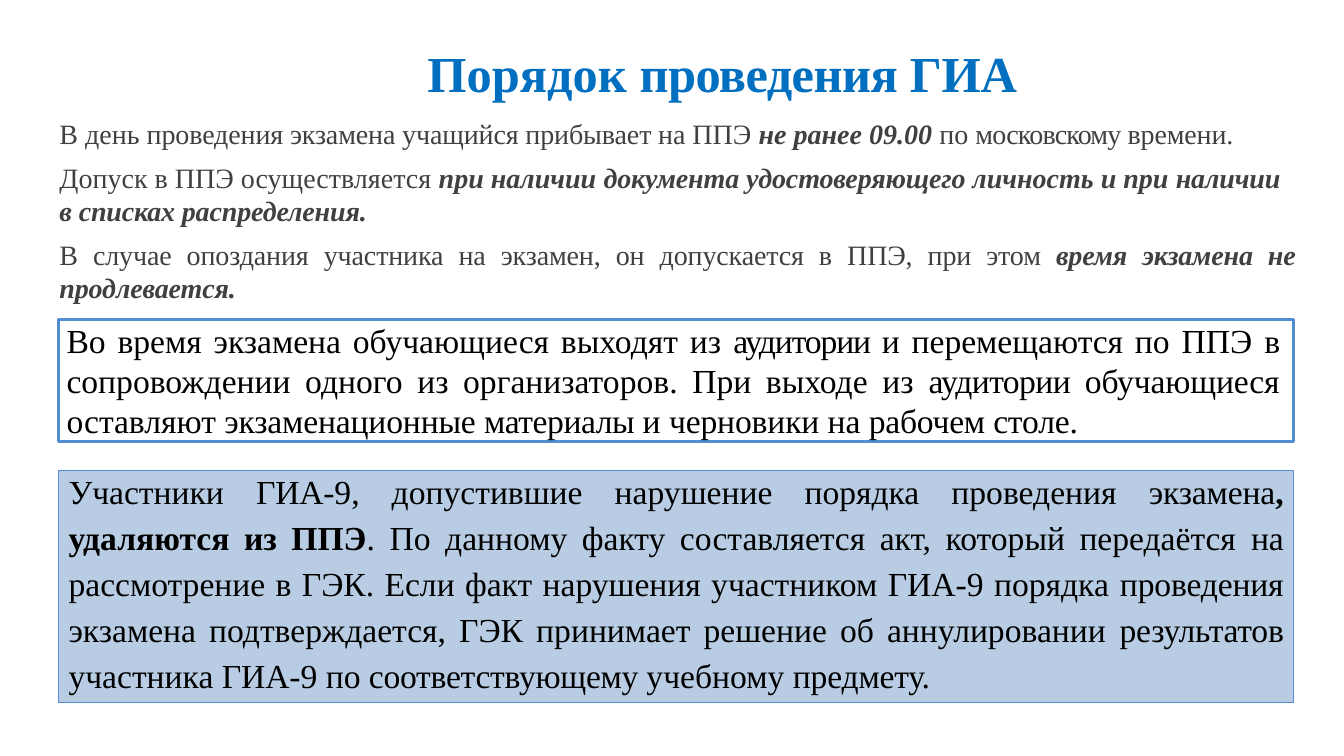
from pptx import Presentation
from pptx import util as u
from pptx.dml.color import RGBColor
from pptx.enum import shapes, text

PX = 9144
FONT = "Times New Roman"
COLORS = {
    "title": "006FC0",
    "body": "404040",
    "black": "000000",
    "border": "538ED3",
    "panel": "B8CDE3",
}

TITLE = [[("Порядок ", 0, "b"), ("проведения ", -0.4, "b"), ("ГИА", -0.2, "b")]]
ADMISSION = [
    [
        ("В день ", 0, ""),
        ("проведения экзамена учащийся прибывает ", -0.1, ""),
        ("на ППЭ ", 0, ""),
        ("не ранее 09.00 ", 0, "bi"),
        ("по ", 0, ""),
        ("московскому ", -0.6, ""),
        ("времени.", -0.1, ""),
    ],
    [
        ("Допуск в ППЭ осуществляется ", 0, ""),
        ("при наличии ", 0, "bi"),
        ("документа удостоверяющего ", -0.1, "bi"),
        ("личность и при ", 0, "bi"),
        ("наличии ", -0.1, "bi"),
        ("в ", 0, "bi"),
        ("списках ", -0.2, "bi"),
        ("распределения.", -0.1, "bi"),
    ],
    [
        ("В случае опоздания участника на экзамен, он допускается в ППЭ, при этом ", -0.1, ""),
        ("время экзамена не продлевается.", -0.1, "bi"),
    ],
]
ESCORT = [[
    ("Во время экзамена обучающиеся выходят из ", 0, ""),
    ("аудитории ", -0.8, ""),
    ("и перемещаются по ППЭ ", 0, ""),
    ("в ", -0.5, ""),
    ("сопровождении одного из организаторов. При выходе из ", 0, ""),
    ("аудитории ", -0.4, ""),
    ("обучающиеся ", -0.1, ""),
    ("оставляют", 0, ""),
    (" экзаменационные ", -0.1, ""),
    ("материалы ", -0.3, ""),
    ("и ", 0, ""),
    ("черновики ", -0.1, ""),
    ("на ", 0, ""),
    ("рабочем ", -0.2, ""),
    ("столе.", -0.1, ""),
]]
REMOVAL = [[
    ("Участники ", 0, ""),
    ("ГИА-", -0.2, ""),
    ("9, допустившие нарушение порядка проведения ", 0, ""),
    ("экзамена", -0.1, ""),
    (", ", -0.1, "b"),
    ("удаляются из ППЭ", 0, "b"),
    (". По данному факту составляется акт, который передаётся ", 0, ""),
    ("на ", -0.2, ""),
    ("рассмотрение в ГЭК. Если факт нарушения участником ГИА-9 порядка ", 0, ""),
    ("проведения ", -0.1, ""),
    ("экзамена подтверждается, ГЭК принимает решение об аннулировании ", 0, ""),
    ("результатов ", -0.2, ""),
    ("участника ", 0, ""),
    ("ГИА-", -0.1, ""),
    ("9 по ", 0, ""),
    ("соответствующему ", -0.2, ""),
    ("учебному ", 0, ""),
    ("предмету.", -0.1, ""),
]]


def scaled(box):
    return [n * PX for n in box]


def write(frame, paragraphs, size, color, insets):
    frame.word_wrap = True
    frame.auto_size = text.MSO_AUTO_SIZE.NONE
    frame.vertical_anchor = text.MSO_ANCHOR.TOP
    (frame.margin_left, frame.margin_top,
     frame.margin_right, frame.margin_bottom) = scaled(insets)
    for index, pieces in enumerate(paragraphs):
        paragraph = frame.paragraphs[0] if index == 0 else frame.add_paragraph()
        paragraph.alignment = text.PP_ALIGN.LEFT
        for words, tracking, style in pieces:
            run = paragraph.add_run()
            run.text = words
            font = run.font
            font.name, font.size = FONT, u.Pt(size)
            font.bold, font.italic = "b" in style, "i" in style
            font.color.rgb = RGBColor.from_string(COLORS[color])
            if tracking:
                font._element.set("spc", str(round(tracking * 100)))
    return frame.paragraphs


def add_panel(slide, box, fill, width):
    panel = slide.shapes.add_shape(shapes.MSO_SHAPE.RECTANGLE, *scaled(box))
    panel.shadow.inherit = False
    if fill:
        panel.fill.solid()
        panel.fill.fore_color.rgb = RGBColor.from_string(COLORS[fill])
    else:
        panel.fill.background()
    panel.line.color.rgb = RGBColor.from_string(COLORS["border"])
    panel.line.width = u.Pt(width)
    return panel


def add_title(slide, box):
    title = slide.shapes.title
    title.left, title.top, title.width, title.height = scaled(box)
    heading = write(title.text_frame, TITLE, 36, "title", (1, 1, 0, 0))[0]
    heading.space_before = u.Pt(1)
    heading.line_spacing = 1.0


def add_admission(slide, box):
    rules = slide.shapes.add_textbox(*scaled(box))
    paragraphs = write(rules.text_frame, ADMISSION, 20, "body", (1, 11, 0, 0))
    for paragraph, gap in zip(paragraphs, (8, 7, 7)):
        paragraph.space_before = u.Pt(gap)
    paragraphs[-1].alignment = text.PP_ALIGN.JUSTIFY


def add_escort(slide, box):
    panel = add_panel(slide, box, None, 1.92)
    paragraph = write(panel.text_frame, ESCORT, 24, "black", (8, 0, 14, 0))[0]
    paragraph.alignment = text.PP_ALIGN.JUSTIFY
    paragraph.line_spacing = u.Pt(28.8)


def add_removal(slide, box):
    add_panel(slide, box, "panel", 0.72)
    left, top, width, height = box
    consequence = slide.shapes.add_textbox(*scaled((left + 10, top - 6, width - 20, height)))
    paragraph = write(consequence.text_frame, REMOVAL, 24, "black", (0, 1, 0, 0))[0]
    paragraph.alignment = text.PP_ALIGN.JUSTIFY
    paragraph.line_spacing = 1.14
    paragraph.space_before = u.Pt(1)


def main():
    deck = Presentation()
    deck.slide_width, deck.slide_height = scaled((1333, 750))
    slide = deck.slides.add_slide(deck.slide_layouts[5])
    add_title(slide, (423, 41, 588, 63))
    add_admission(slide, (58, 105, 1227, 199))
    add_escort(slide, (58, 317, 1225, 121))
    add_removal(slide, (58, 467, 1225, 230))
    deck.save("out.pptx")


if __name__ == "__main__":
    main()
